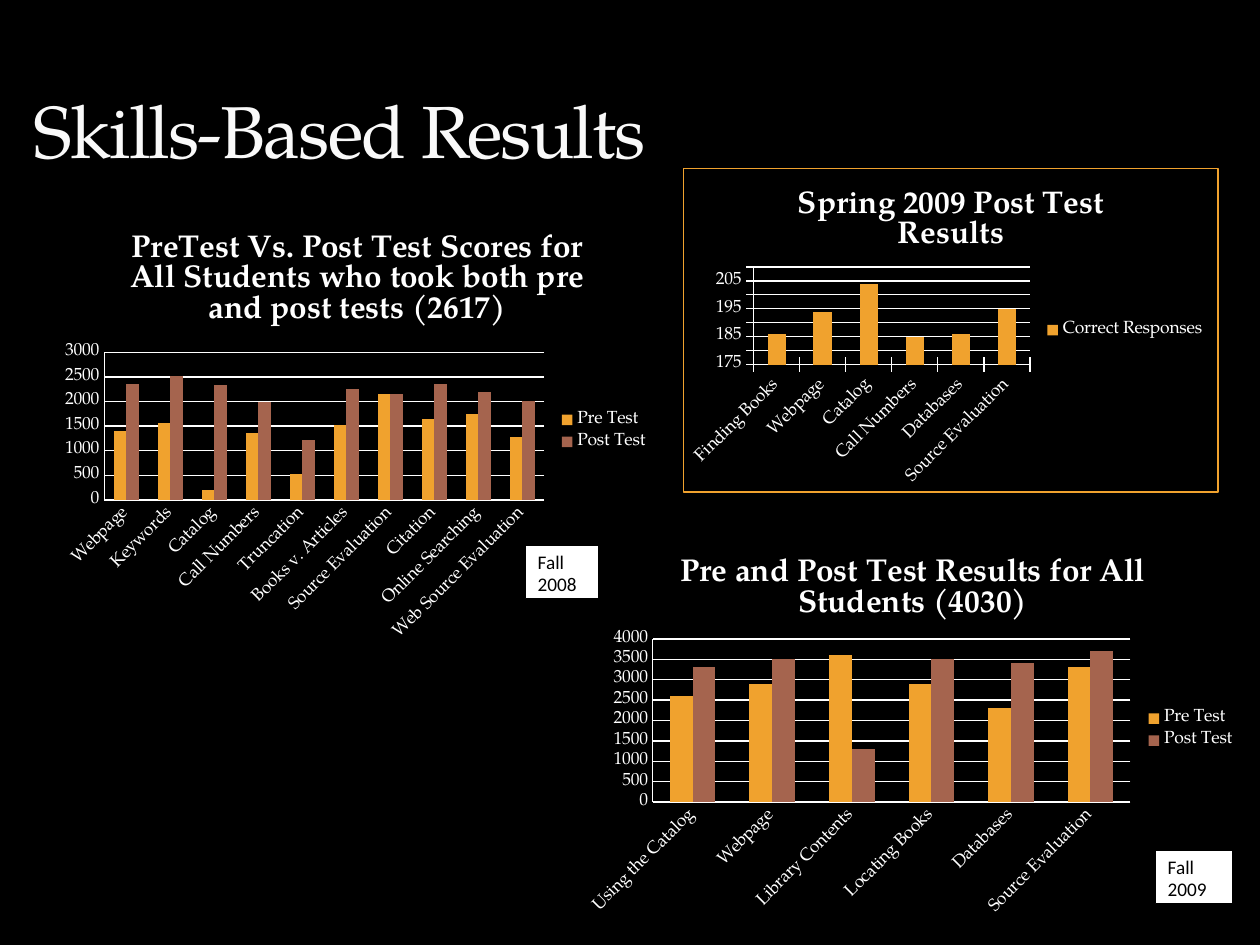
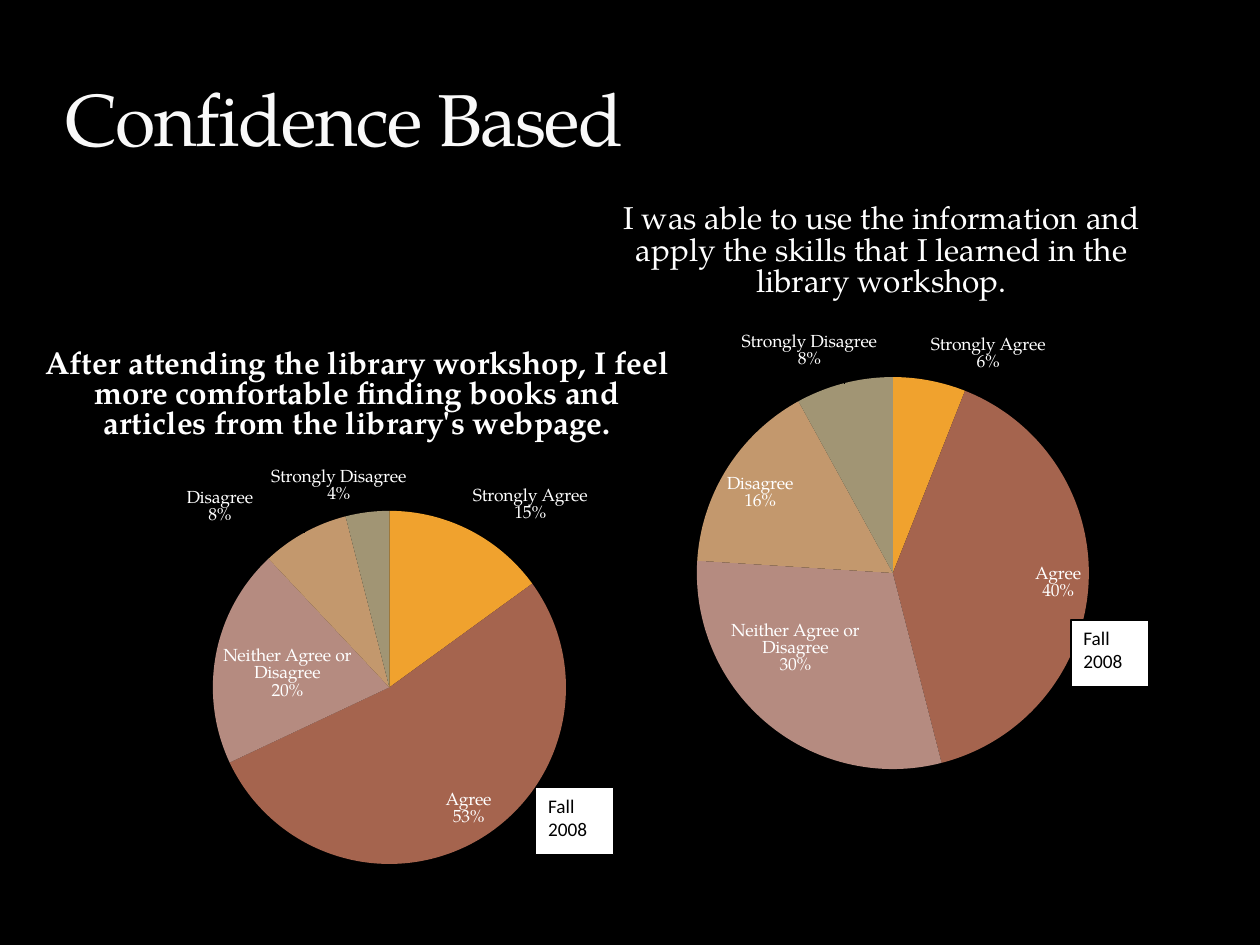
"""Build two slides of library workshop results with native charts."""
from dataclasses import dataclass

from lxml.etree import SubElement
from pptx import Presentation
from pptx.chart.data import CategoryChartData
from pptx.dml.color import RGBColor
from pptx.enum.chart import XL_CHART_TYPE, XL_LABEL_POSITION, XL_LEGEND_POSITION, XL_TICK_MARK
from pptx.enum.shapes import MSO_SHAPE
from pptx.enum.text import MSO_ANCHOR, PP_ALIGN
from pptx.oxml import parse_xml
from pptx.oxml.ns import nsdecls, qn
from pptx.util import Cm, Pt


@dataclass(frozen=True)
class Theme:
    background: str = "000000"
    heading: str = "F9F9F9"
    text: str = "FFFFFF"
    note_fill: str = "FFFFFF"
    note_text: str = "000000"
    accents: tuple = ("F0A22E", "A5644E", "B58B80", "C3986D", "A19574")
    serif: str = "TeX Gyre Pagella"
    sans: str = "Calibri"
    heading_size: int = 42
    chart_title_size: int = 18
    chart_size: int = 10
    note_size: int = 11


THEME = Theme()
INSIDE, OUTSIDE = XL_LABEL_POSITION.INSIDE_END, XL_LABEL_POSITION.OUTSIDE_END
ANSWERS = ["Strongly Agree", "Agree", "Neither Agree or Disagree", "Disagree", "Strongly Disagree"]

SKILLS = {
    "heading": ("Skills-Based Results", (0.43, 0.43, 15.24, 3.18)),
    "columns": [
        {
            "title": "PreTest Vs. Post Test Scores for All Students who took both pre and post tests (2617)",
            "box": (1.07, 4.24, 12.27, 8.89),
            "plot": (2.1, 7.1, 8.87, 2.98),
            "scale": (0, 3000, 500),
            "tick": XL_TICK_MARK.NONE,
            "categories": ["Webpage", "Keywords", "Catalog", "Call Numbers", "Truncation",
                           "Books v. Articles", "Source Evaluation", "Citation",
                           "Online Searching", "Web Source Evaluation"],
            "series": {
                "Pre Test": [1410, 1560, 200, 1360, 520, 1520, 2150, 1640, 1740, 1280],
                "Post Test": [2350, 2510, 2340, 1990, 1220, 2260, 2160, 2360, 2190, 2010],
            },
        },
        {
            "title": "Pre and Post Test Results for All Students (4030)",
            "box": (11.63, 10.8, 13.54, 7.82),
            "plot": (13.16, 12.88, 9.63, 3.29),
            "scale": (0, 4000, 500),
            "tick": XL_TICK_MARK.NONE,
            "categories": ["Using the Catalog", "Webpage", "Library Contents", "Locating Books",
                           "Databases", "Source Evaluation"],
            "series": {
                "Pre Test": [2600, 2900, 3600, 2900, 2300, 3300],
                "Post Test": [3300, 3500, 1300, 3500, 3400, 3700],
            },
        },
        {
            "title": "Spring 2009 Post Test Results",
            "box": (13.77, 3.38, 10.8, 6.55),
            "plot": (15.18, 5.38, 5.58, 1.98),
            "scale": (175, 210, 5),
            "tick": XL_TICK_MARK.CROSS,
            "border": THEME.accents[0],
            "categories": ["Finding Books", "Webpage", "Catalog", "Call Numbers", "Databases",
                           "Source Evaluation"],
            "series": {"Correct Responses": [186, 194, 204, 185, 186, 195]},
        },
    ],
    "pies": [],
    "notes": [("Fall 2008", (10.59, 11, 1.47, 1.07), 0.95),
              ("Fall 2009", (23.29, 17.15, 1.57, 1.07), 0.95)],
}

CONFIDENCE = {
    "heading": ("Confidence Based", (1.07, 0, 22.86, 3.38)),
    "columns": [],
    "pies": [
        {
            "title": "After attending the library workshop, I feel more comfortable finding books "
                     "and articles from the library's webpage.",
            "box": (-0.84, 6.55, 16.08, 11.23),
            "plot": (4.29, 10.3, 7.12, 7.12),
            "categories": ANSWERS,
            "series": {"Series 1": [15, 53, 20, 8, 4]},
            "labels": [(OUTSIDE, 0, 0), (INSIDE, 0.02, -0.01), (INSIDE, 0, -0.01),
                       (OUTSIDE, -0.06, 0), (OUTSIDE, 0.05, 0)],
        },
        {
            "title": "I was able to use the information and apply the skills that I learned "
                     "in the library workshop.",
            "bold": False,
            "box": (10.8, 3.61, 13.94, 12.27),
            "plot": (14.05, 7.6, 7.9, 7.92),
            "categories": ANSWERS,
            "series": {"Series 1": [6, 40, 30, 16, 8]},
            "labels": [(OUTSIDE, 0, 0), (INSIDE, 0, 0), (INSIDE, -0.06, -0.07),
                       (INSIDE, -0.01, 0.01), (OUTSIDE, 0.05, -0.01)],
        },
    ],
    "notes": [("Fall 2008", (10.8, 15.88, 1.57, 1.35), 1.0),
              ("Fall 2008", (21.59, 12.5, 1.57, 1.35), 1.0)],
}


def color(value):
    return RGBColor.from_string(value)


def place(box):
    return [Cm(length) for length in box]


def style_font(font, name, size, ink, bold=False):
    font.name, font.size, font.bold = name, Pt(size), bold
    font.color.rgb = color(ink)


def manual_layout(**values):
    layout = parse_xml(f"<c:layout {nsdecls('c')}/>")
    manual = SubElement(layout, qn("c:manualLayout"))
    for tag, value in values.items():
        SubElement(manual, qn(f"c:{tag}"), val=str(value))
    return layout


def add_heading(page, text, box):
    frame = page.shapes.add_textbox(*place(box)).text_frame
    frame.word_wrap = True
    frame.vertical_anchor = MSO_ANCHOR.BOTTOM
    para = frame.paragraphs[0]
    span = para.add_run()
    span.text = text
    style_font(para.font, THEME.serif, THEME.heading_size, THEME.heading)
    style_font(span.font, THEME.serif, THEME.heading_size, THEME.heading)
    span.font._element.set("spc", "-100")


def add_note(page, text, box, spacing):
    note = page.shapes.add_shape(MSO_SHAPE.RECTANGLE, *place(box))
    note.shadow.inherit = False
    note.fill.solid()
    note.fill.fore_color.rgb = color(THEME.note_fill)
    note.line.color.rgb = color(THEME.background)
    note.line.width = Pt(0.75)
    frame = note.text_frame
    frame.word_wrap = True
    frame.vertical_anchor = MSO_ANCHOR.TOP
    para = frame.paragraphs[0]
    para.text = text
    para.alignment = PP_ALIGN.LEFT
    para.line_spacing = spacing
    para.space_after = Pt(10)
    style_font(para.font, THEME.sans, THEME.note_size, THEME.note_text)


def frame_chart(chart, item):
    border = item.get("border")
    fill = f'<a:solidFill><a:srgbClr val="{border}"/></a:solidFill>' if border else "<a:noFill/>"
    outline = parse_xml(f'<c:spPr {nsdecls("c", "a")}><a:noFill/>'
                        f'<a:ln w="{Pt(0.75)}">{fill}</a:ln></c:spPr>')
    chart.element.find(qn("c:txPr")).addprevious(outline)

    area = chart.element.find(f"{qn('c:chart')}/{qn('c:plotArea')}")
    for old in area.findall(qn("c:layout")):
        area.remove(old)
    left, top, width, height = item["box"]
    plot_left, plot_top, plot_width, plot_height = item["plot"]
    area.insert(0, manual_layout(
        layoutTarget="inner", xMode="edge", yMode="edge",
        x=round((plot_left - left) / width, 3), y=round((plot_top - top) / height, 3),
        w=round(plot_width / width, 3), h=round(plot_height / height, 3)))


def add_chart(page, kind, item):
    data = CategoryChartData()
    data.categories = item["categories"]
    for name, values in item["series"].items():
        data.add_series(name, values)
    chart = page.shapes.add_chart(kind, *place(item["box"]), data).chart
    style_font(chart.font, THEME.serif, THEME.chart_size, THEME.text)
    chart.has_title = True
    para = chart.chart_title.text_frame.paragraphs[0]
    para.text = item["title"]
    for target in (para, para.runs[0]):
        style_font(target.font, THEME.serif, THEME.chart_title_size, THEME.text,
                   item.get("bold", True))
    frame_chart(chart, item)
    return chart


def add_columns(page, item):
    chart = add_chart(page, XL_CHART_TYPE.COLUMN_CLUSTERED, item)
    chart.has_legend = True
    chart.legend.position = XL_LEGEND_POSITION.RIGHT
    chart.legend.include_in_layout = False
    plot = chart.plots[0]
    plot.vary_by_categories = False
    plot.gap_width, plot.overlap = 150, 0
    for series, accent in zip(plot.series, THEME.accents):
        series.format.fill.solid()
        series.format.fill.fore_color.rgb = color(accent)
    values = chart.value_axis
    values.minimum_scale, values.maximum_scale, values.major_unit = item["scale"]
    values.has_major_gridlines = True
    for line in (values.major_gridlines.format.line, values.format.line,
                 chart.category_axis.format.line):
        line.color.rgb = color(THEME.text)
        line.width = Pt(0.75)
    for axis in (values, chart.category_axis):
        axis.major_tick_mark = item["tick"]
        axis.minor_tick_mark = XL_TICK_MARK.NONE
        style_font(axis.tick_labels.font, THEME.serif, THEME.chart_size, THEME.text)
    chart.category_axis._element.find(f"{qn('c:txPr')}/{qn('a:bodyPr')}").set("rot", "-2700000")


def add_pie(page, item):
    chart = add_chart(page, XL_CHART_TYPE.PIE, item)
    chart.has_legend = False
    plot = chart.plots[0]
    plot.vary_by_categories = True
    series = plot.series[0]
    labels = series.data_labels
    labels.show_percentage = labels.show_category_name = True
    labels.show_value = False
    labels.number_format, labels.number_format_is_linked = "0%", False
    for index, (position, _, _) in enumerate(item["labels"]):
        point = series.points[index]
        point.format.fill.solid()
        point.format.fill.fore_color.rgb = color(THEME.accents[index])
        label = point.data_label
        style_font(label.font, THEME.serif, THEME.chart_size, THEME.text)
        label.position = position
    for mark, (_, shift_x, shift_y) in zip(labels._element.findall(qn("c:dLbl")), item["labels"]):
        for tag, shown in (("showVal", "0"), ("showCatName", "1"), ("showPercent", "1")):
            mark.find(qn(f"c:{tag}")).set("val", shown)
        if shift_x or shift_y:
            mark.find(qn("c:idx")).addnext(manual_layout(x=shift_x, y=shift_y))


def build_page(deck, content):
    page = deck.slides.add_slide(deck.slide_layouts[6])
    page.background.fill.solid()
    page.background.fill.fore_color.rgb = color(THEME.background)
    add_heading(page, *content["heading"])
    for item in content["columns"]:
        add_columns(page, item)
    for item in content["pies"]:
        add_pie(page, item)
    for note in content["notes"]:
        add_note(page, *note)


def main():
    deck = Presentation()
    deck.slide_width, deck.slide_height = Cm(25.4), Cm(19.05)
    for content in (SKILLS, CONFIDENCE):
        build_page(deck, content)
    deck.save("out.pptx")


if __name__ == "__main__":
    main()
